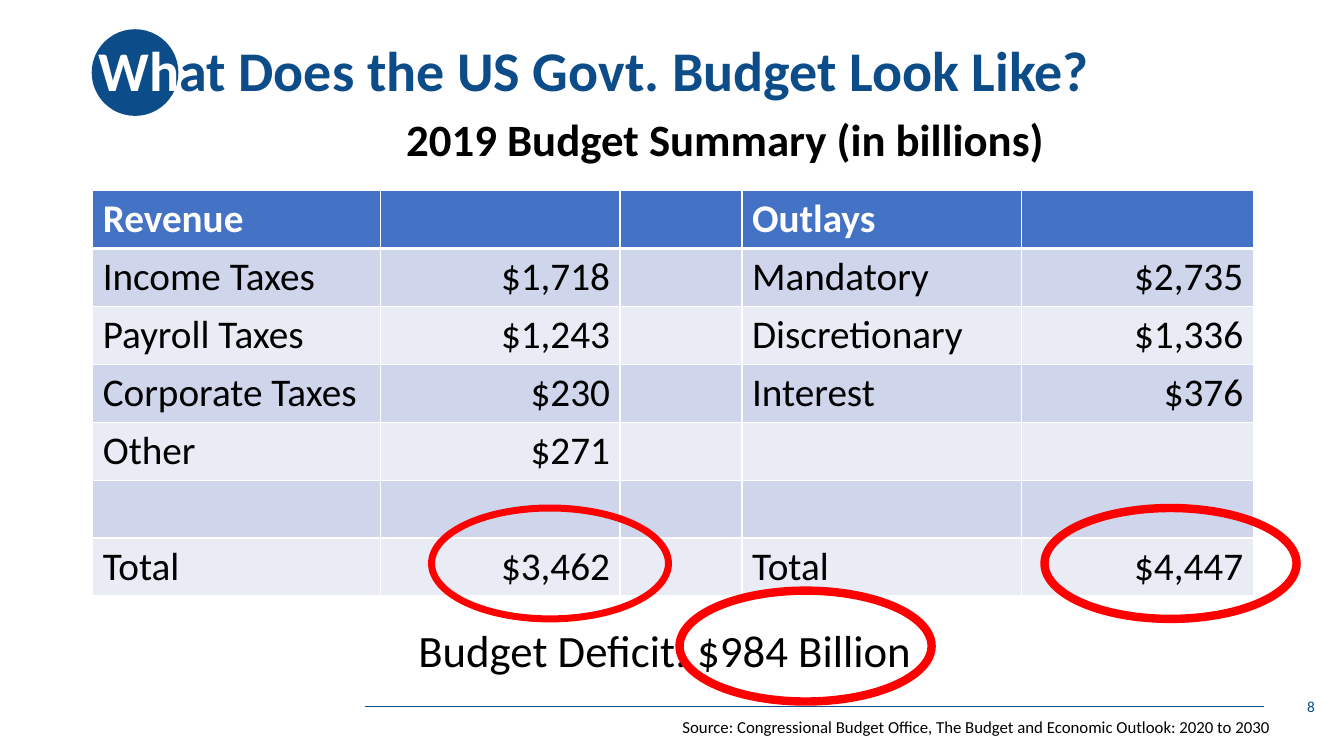
from lxml import etree
from pptx import Presentation
from pptx import util as u
from pptx.dml import color
from pptx.enum import shapes, text
from pptx.oxml import ns

NAVY, WHITE, BLACK, RED = "0C4C88", "FFFFFF", "000000", "FF0000"
HEAD, BANDS = "4472C4", ("E9EBF5", "CFD5EA")
WIDTHS = (2.85, 2.38, 1.21, 2.77, 2.3)
ROWS = (
    ("Revenue", "", "", "Outlays", ""),
    ("Income Taxes", "$1,718", "", "Mandatory", "$2,735"),
    ("Payroll Taxes", "$1,243", "", "Discretionary", "$1,336"),
    ("Corporate Taxes", "$230", "", "Interest", "$376"),
    ("Other", "$271", "", "", ""),
    ("", "", "", "", ""),
    ("Total", "$3,462", "", "Total", "$4,447"),
)


def rgb(code):
    """Turn a hex string into a colour."""
    return color.RGBColor.from_string(code)


def inch(*box):
    """Turn numbers into lengths."""
    return [u.Inches(n) for n in box]


def write(frame, *parts, size=28, bold=False, align="LEFT", anchor="TOP"):
    """Write (words, colour) parts as one paragraph."""
    frame.word_wrap = True
    frame.vertical_anchor = getattr(text.MSO_ANCHOR, anchor)
    para = frame.paragraphs[0]
    para.alignment = getattr(text.PP_ALIGN, align)
    for words, code in parts:
        run = para.add_run()
        run.text = words
        run.font.name, run.font.size, run.font.bold = "Calibri", u.Pt(size), bold
        run.font.color.rgb = rgb(code)
    return para


def label(slide, box, words, code=BLACK, **form):
    """Add a text box."""
    write(slide.shapes.add_textbox(*inch(*box)).text_frame, (words, code), **form)


def oval(slide, box, fill=None, line=None, width=1):
    """Add an ellipse that is filled or outlined."""
    ring = slide.shapes.add_shape(shapes.MSO_SHAPE.OVAL, *inch(*box))
    ring.shadow.inherit = False
    if fill:
        ring.fill.solid()
        ring.fill.fore_color.rgb = rgb(fill)
    else:
        ring.fill.background()
    if line:
        ring.line.color.rgb, ring.line.width = rgb(line), u.Pt(width)
    else:
        ring.line.fill.background()


def header(slide, left, top, width, height):
    """Place the disc and the title over it."""
    oval(slide, (left + 0.03, top + 0.29, 0.86, 0.86), fill=NAVY)
    title = slide.shapes.title
    title.left, title.top, title.width, title.height = inch(left, top, width, height)
    slide.shapes._spTree.append(title._element)
    para = write(title.text_frame, ("Wh", WHITE),
                 ("at Does the US Govt. Budget Look Like?", NAVY),
                 size=40, bold=True, anchor="MIDDLE")
    para.line_spacing = 0.9
    title.text_frame.auto_size = text.MSO_AUTO_SIZE.NONE


def border(cell, side, width):
    """Draw one white edge of a cell."""
    edge = etree.SubElement(cell._tc.get_or_add_tcPr(), ns.qn("a:" + side),
                            w=str(u.Pt(width)))
    fill = etree.SubElement(edge, ns.qn("a:solidFill"))
    etree.SubElement(fill, ns.qn("a:srgbClr"), val=WHITE)


def budget(slide, left, top, width, height):
    """Place the table of revenue and outlays."""
    frame = slide.shapes.add_table(len(ROWS), len(WIDTHS),
                                   *inch(left, top, width, height))
    table = frame.table
    for col, wide in zip(table.columns, WIDTHS):
        col.width = u.Inches(wide)
    for r, row in enumerate(ROWS):
        for c, words in enumerate(row):
            cell = table.cell(r, c)
            for side in ("lnL", "lnR", "lnT", "lnB"):
                thick = (r, side) in ((0, "lnB"), (1, "lnT"))
                border(cell, side, 3 if thick else 1)
            cell.fill.solid()
            cell.fill.fore_color.rgb = rgb(BANDS[r % 2] if r else HEAD)
            if words:
                write(cell.text_frame, (words, BLACK if r else WHITE), bold=r == 0,
                      align="RIGHT" if words.startswith("$") else "LEFT")


def rings(slide, left, top):
    """Circle both totals and the deficit."""
    for x, y, wide, line in ((0, 0, 2.35, 5), (6.08, 0, 2.5, 6), (2.46, 0.82, 2.5, 6)):
        oval(slide, (left + x, top + y, wide, 1.1), line=RED, width=line)


def footer(slide, left, top):
    """Place the rule, the source and the page number."""
    rule = slide.shapes.add_connector(shapes.MSO_CONNECTOR.STRAIGHT,
                                      *inch(left, top, left + 8.92, top))
    rule.line.color.rgb, rule.line.width = rgb(NAVY), u.Pt(0.5)
    etree.SubElement(rule._element.spPr, ns.qn("a:effectLst"))
    label(slide, (left + 6.52, top - 0.2, 3, 0.4), "8", NAVY, size=11,
          align="RIGHT", anchor="MIDDLE")
    label(slide, (left + 3.05, top + 0.05, 6.11, 0.3),
          "Source: Congressional Budget Office, The Budget and Economic Outlook: "
          "2020 to 2030", size=12)


def main():
    """Build and save the slide."""
    deck = Presentation()
    deck.slide_width, deck.slide_height = inch(13.33, 7.5)
    slide = deck.slides.add_slide(deck.slide_layouts[5])
    header(slide, 0.88, 0, 11.5, 1.45)
    budget(slide, 0.92, 1.89, 11.51, 3.99)
    label(slide, (3.93, 1.06, 6.59, 0.64), "2019 Budget Summary (in billions)",
          size=32, bold=True)
    label(slide, (4.05, 6.13, 5.15, 0.64), "Budget Deficit: $984 Billion", size=32)
    rings(slide, 4.28, 5.04)
    footer(slide, 3.62, 7.01)
    deck.save("out.pptx")


if __name__ == "__main__":
    main()
